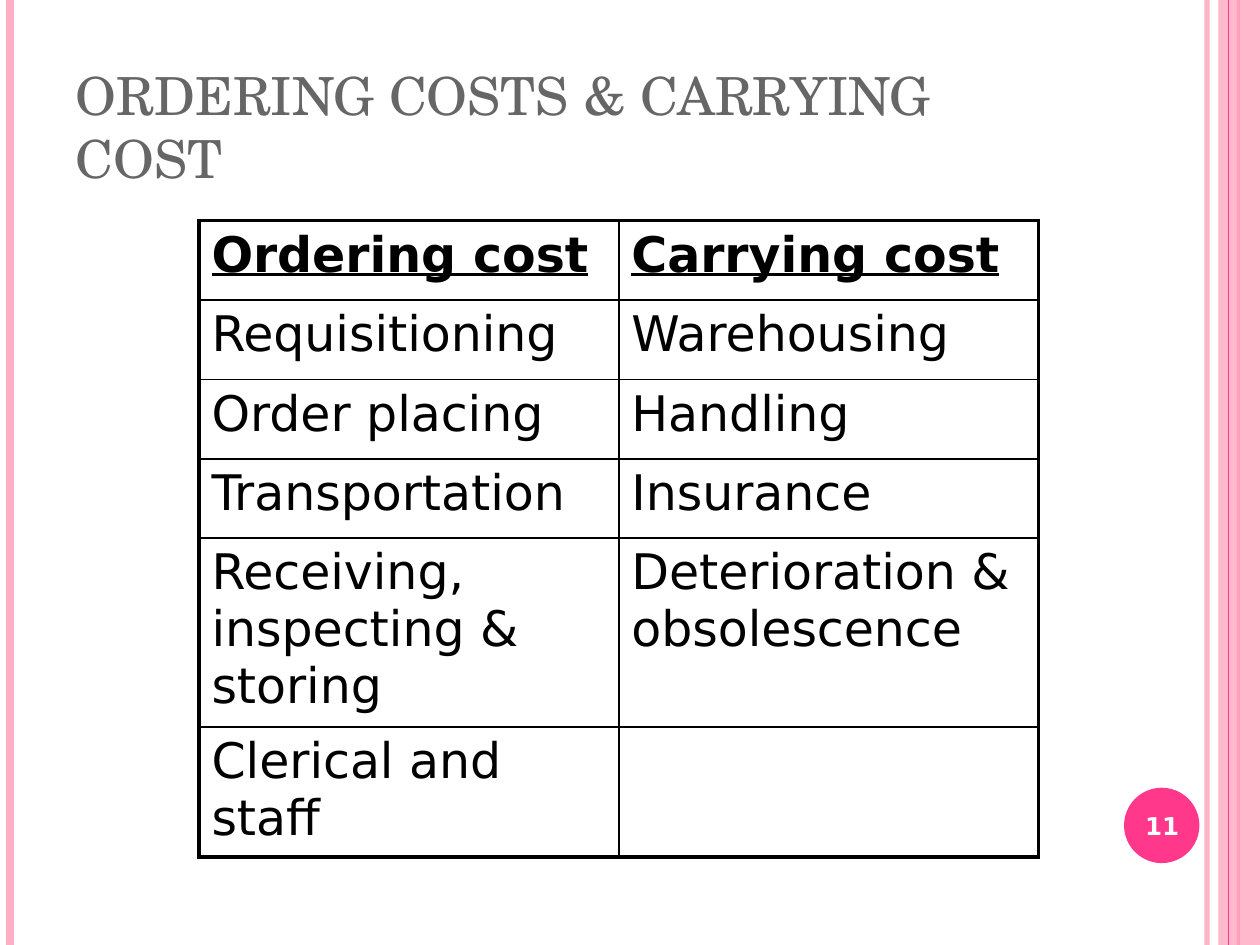
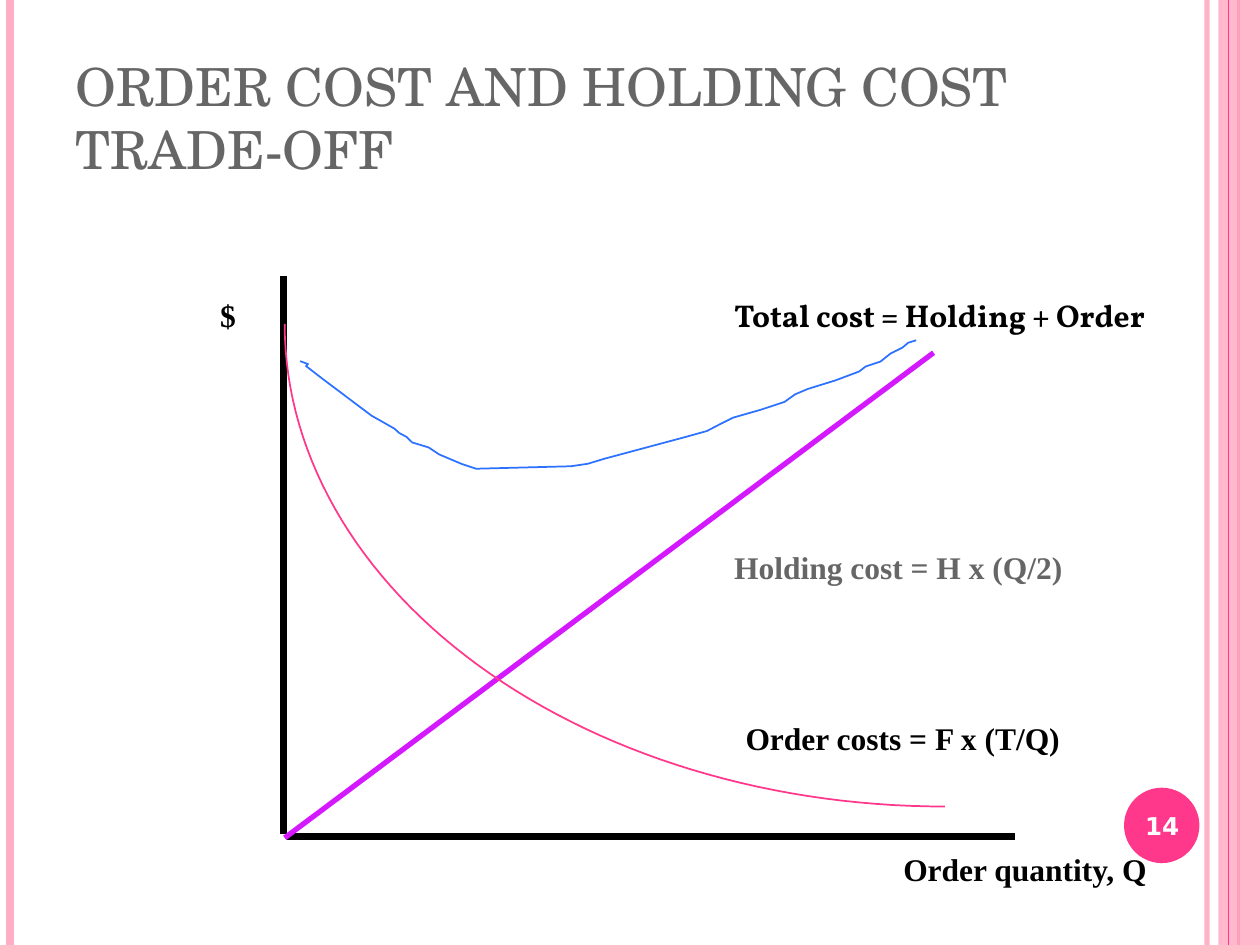
import math

from lxml import etree
from pptx import Presentation
from pptx import util as u
from pptx.dml.color import RGBColor
from pptx.enum import shapes, text
from pptx.oxml.ns import qn

# Shared look
PINK, PALE, GREY = "FF388C", "FFAEC5", "666666"
BLACK, WHITE, PURPLE, BLUE = "000000", "FFFFFF", "D519FF", "2C71FF"
TITLE = dict(name="TeX Gyre Schola", size=u.Pt(30), bold=False)
NUMBER = dict(name="DejaVu Sans", size=u.Pt(14), bold=True)
CELL = dict(name="DejaVu Sans", size=u.Pt(28), bold=False)
HEAD = dict(CELL, bold=True, underline=True)
LABEL = dict(name="Times New Roman", size=u.Pt(18), bold=True)

COSTS = [
    ("Ordering cost", "Carrying cost"),
    ("Requisitioning", "Warehousing"),
    ("Order placing", "Handling"),
    ("Transportation", "Insurance"),
    ("Receiving, inspecting & storing", "Deterioration & obsolescence"),
    ("Clerical and staff", ""),
]
ROW_HEIGHTS = [1.6] * 4 + [3.81, 2.62]

TOTAL_COST = [
    (6.05, 7.28), (6.21, 7.34), (6.17, 7.38), (6.48, 7.62), (7.49, 8.38),
    (7.95, 8.64), (8.05, 8.73), (8.2, 8.81), (8.31, 8.92), (8.64, 9.02),
    (8.85, 9.16), (9.3, 9.35), (9.6, 9.45), (11.51, 9.4), (11.85, 9.35),
    (12.18, 9.25), (12.85, 9.07), (13.82, 8.81), (14.25, 8.69),
    (14.52, 8.55), (14.78, 8.42), (15.34, 8.26), (15.82, 8.1),
    (16.03, 7.95), (16.29, 7.84), (16.84, 7.67), (17.32, 7.49),
    (17.45, 7.39), (17.75, 7.29), (17.95, 7.13), (18.19, 7.01),
    (18.31, 6.91), (18.47, 6.86),
]


def rgb(value):
    return RGBColor.from_string(value)


def cm(*values):
    return [u.Cm(v) for v in values]


def set_alpha(sp, percent):
    """Make the fill or line colour of a shape see-through."""
    color = next(sp._element.spPr.iter(qn("a:srgbClr")))
    etree.SubElement(color, qn("a:alpha"), val=str(percent * 1000))


def write(tf, words, style, color, align=text.PP_ALIGN.LEFT):
    p = tf.paragraphs[0]
    p.alignment = align
    r = p.add_run()
    r.text = words
    for key, value in style.items():
        setattr(r.font, key, value)
    r.font.color.rgb = rgb(color)
    return p


def add_line(slide, start, end, color, width):
    sp = slide.shapes.add_connector(
        shapes.MSO_CONNECTOR.STRAIGHT, *cm(*start, *end))
    sp.line.color.rgb = rgb(color)
    sp.line.width = u.Pt(width)
    etree.SubElement(sp._element.spPr, qn("a:effectLst"))
    return sp


def add_block(slide, kind, box, color):
    sp = slide.shapes.add_shape(kind, *cm(*box))
    sp.shadow.inherit = False
    sp.fill.solid()
    sp.fill.fore_color.rgb = rgb(color)
    sp.line.fill.background()
    return sp


def add_curve(slide, points, color):
    points = [cm(*point) for point in points]
    builder = slide.shapes.build_freeform(*points[0])
    builder.add_line_segments(points[1:], close=False)
    sp = builder.convert_to_shape()
    sp.shadow.inherit = False
    sp.fill.background()
    sp.line.color.rgb = rgb(color)
    sp.line.width = u.Pt(1)


def add_label(slide, words, x, y, width, color=BLACK, font=LABEL["name"]):
    tf = slide.shapes.add_textbox(*cm(x, y, width, 1.02)).text_frame
    tf.word_wrap = False
    write(tf, words, dict(LABEL, name=font), color)


def add_number(slide, number):
    tf = slide.shapes.add_textbox(*cm(22.58, 15.93, 1.7, 1.45)).text_frame
    tf.word_wrap = True
    tf.vertical_anchor = text.MSO_ANCHOR.MIDDLE
    write(tf, number, NUMBER, WHITE, text.PP_ALIGN.CENTER)


def add_slide(prs, layout, title, anchor):
    slide = prs.slides.add_slide(layout)
    sp = slide.shapes.title
    sp.left, sp.top, sp.width, sp.height = cm(1.27, 0.76, 20.75, 3.18)
    tf = sp.text_frame
    tf.auto_size = text.MSO_AUTO_SIZE.NONE
    tf.vertical_anchor = anchor
    write(tf, title, TITLE, GREY)
    return slide


def add_frame(slide, layout):
    """Draw the side bands and the number disc, then move them to the layout."""
    parts = []
    for x, color, width in [(24.33, PALE, 3), (0.2, PALE, 4.5), (24.97, PINK, 1.5)]:
        parts.append(add_line(slide, (x, 0), (x, 19.05), color, width))
    band = add_block(slide, shapes.MSO_SHAPE.RECTANGLE, (24.56, 0, 0.84, 19.05), PALE)
    set_alpha(parts[0], 92)
    set_alpha(band, 87)
    parts += [
        band,
        add_line(slide, (24.77, 0), (24.77, 19.05), PINK, 0.75),
        add_block(slide, shapes.MSO_SHAPE.OVAL, (22.66, 15.88, 1.52, 1.52), PINK),
    ]
    for sp in parts:
        layout.shapes.element.append(sp._element)


def set_borders(cell, widths):
    tc_pr = cell._tc.get_or_add_tcPr()
    for side, width in widths.items():
        ln = etree.SubElement(tc_pr, qn("a:ln" + side), w=str(u.Pt(width)))
        fill = etree.SubElement(ln, qn("a:solidFill"))
        etree.SubElement(fill, qn("a:srgbClr"), val=BLACK)


def add_cost_table(slide):
    rows, cols = len(COSTS), len(COSTS[0])
    frame = slide.shapes.add_table(
        rows, cols, *cm(4.01, 4.45, 16.93, sum(ROW_HEIGHTS)))
    table = frame.table
    table.first_row = table.horz_banding = False
    for i, height in enumerate(ROW_HEIGHTS):
        table.rows[i].height = u.Cm(height)
        for j, words in enumerate(COSTS[i]):
            cell = table.cell(i, j)
            # Thick outer edge, thin inner lines
            edges = dict(L=j == 0, R=j == cols - 1, T=i == 0, B=i == rows - 1)
            set_borders(cell, {s: 2.25 if outer else 1 for s, outer in edges.items()})
            cell.fill.background()
            if words:
                p = write(cell.text_frame, words, CELL if i else HEAD, BLACK)
                p.space_before = u.Pt(5)


def add_cost_graph(slide):
    # Axes and holding cost
    add_line(slide, (5.72, 5.56), (5.72, 16.81), BLACK, 4)
    add_line(slide, (5.79, 16.87), (20.47, 16.87), BLACK, 4)
    add_line(slide, (5.74, 16.89), (18.82, 7.11), PURPLE, 3)
    # Order cost: a quarter of an ellipse
    steps = 60
    angles = [math.pi / 2 * (1 + k / steps) for k in range(steps + 1)]
    add_curve(slide, [(19.05 + 13.31 * math.cos(a), 6.53 + 9.73 * math.sin(a))
                      for a in angles], PINK)
    add_curve(slide, TOTAL_COST, BLUE)
    # Labels
    add_label(slide, "Order costs = F x (T/Q)", 14.78, 14.38, 6.88)
    add_label(slide, "Order quantity, Q", 17.96, 17.02, 5.46)
    add_label(slide, "$", 4.19, 5.84, 0.81)
    add_label(slide, "Holding cost = H x (Q/2)", 14.55, 10.92, 7.14, GREY)
    add_label(slide, "Total cost = Holding + Order", 14.55, 5.84, 8.89, font="Vollkorn")


def main():
    prs = Presentation()
    prs.slide_width, prs.slide_height = cm(25.4, 19.05)
    layout = prs.slide_layouts.get_by_name("Title Only")

    # Cost table
    s = add_slide(prs, layout, "ORDERING COSTS & CARRYING COST",
                  text.MSO_ANCHOR.BOTTOM)
    add_frame(s, layout)
    add_cost_table(s)
    add_number(s, "11")

    # Cost graph
    s = add_slide(prs, layout, "ORDER COST AND HOLDING COST TRADE-OFF",
                  text.MSO_ANCHOR.MIDDLE)
    add_cost_graph(s)
    add_number(s, "14")

    prs.save("out.pptx")


if __name__ == "__main__":
    main()
